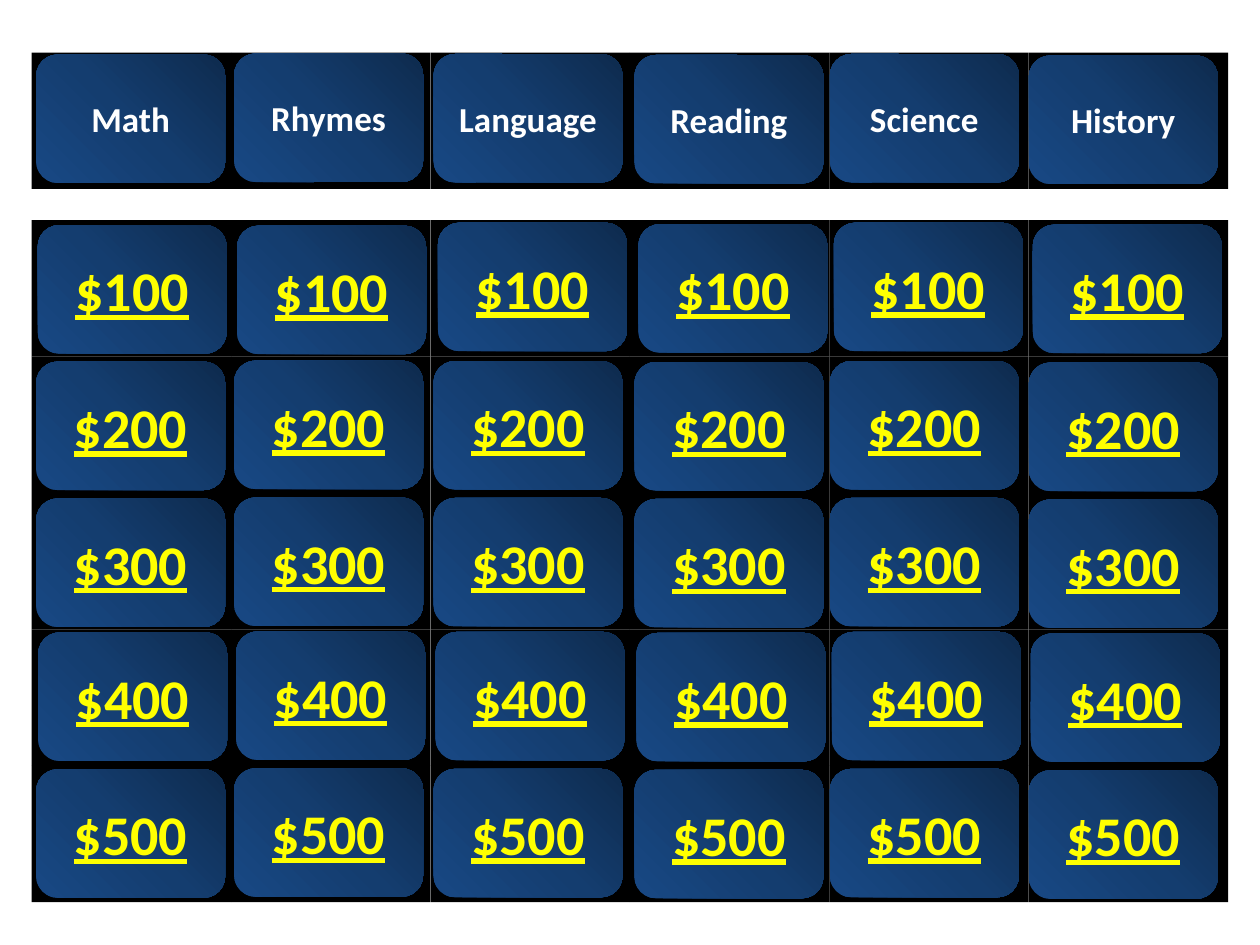
from lxml import etree
from pptx import Presentation
from pptx import util as u
from pptx.dml.color import RGBColor
from pptx.enum import shapes, text
from pptx.oxml import ns

Cm = u.Cm
BLACK = RGBColor(0x00, 0x00, 0x00)
WHITE = RGBColor(0xFF, 0xFF, 0xFF)
GOLD = RGBColor(0xFF, 0xFF, 0x00)
SHADES = [
    (0, RGBColor(0x0E, 0x2B, 0x4E)),
    (50, RGBColor(0x14, 0x3D, 0x6F)),
    (100, RGBColor(0x18, 0x48, 0x84)),
]

TOPICS = ["Math", "Rhymes", "Language", "Reading", "Science", "History"]
PRICES = ["$100", "$200", "$300", "$400", "$500"]

LEFTS = [0.73, 4.72, 8.74, 12.79, 16.73, 20.74]
DIPS = [0.02, 0, 0.01, 0.03, 0.01, 0.04]
FLAT = [0] * 6
ROWS = [
    (1.08, FLAT, DIPS),
    (4.49, [0.03, 0.06, 0.09, 0.08, 0.08, 0.08], [0.05, 0.06, 0, 0.03, 0, 0.04]),
    (7.27, FLAT, DIPS),
    (10.03, FLAT, DIPS),
    (12.73, [0.04] * 6, DIPS),
    (15.49, FLAT, DIPS),
]
EDGE, HEAD, BODY = 0.64, 1.06, 4.44
CELL_W, CELL_H = 4.02, 2.75
CARD_W, CARD_H = 3.81, 2.59


def add_box(slide, kind, x, y, w, h):
    box = slide.shapes.add_shape(kind, Cm(x), Cm(y), Cm(w), Cm(h))
    box.shadow.inherit = False
    box.line.fill.background()
    return box


def shade(box):
    grad = etree.Element(ns.qn("a:gradFill"), rotWithShape="1")
    stops = etree.SubElement(grad, ns.qn("a:gsLst"))
    for spot, tone in SHADES:
        stop = etree.SubElement(stops, ns.qn("a:gs"), pos=str(spot * 1000))
        etree.SubElement(stop, ns.qn("a:srgbClr"), val=str(tone))
    glow = etree.SubElement(grad, ns.qn("a:path"), path="circle")
    etree.SubElement(glow, ns.qn("a:fillToRect"), l="100000", b="100000")
    box.fill.background()
    blank = box.element.spPr.find(ns.qn("a:noFill"))
    box.element.spPr.replace(blank, grad)


def add_card(slide, x, y, label, size, tone, line):
    card = add_box(slide, shapes.MSO_SHAPE.ROUNDED_RECTANGLE, x, y, CARD_W, CARD_H)
    shade(card)
    frame = card.text_frame
    frame.text = label
    frame.vertical_anchor = text.MSO_ANCHOR.MIDDLE
    para = frame.paragraphs[0]
    para.alignment = text.PP_ALIGN.CENTER
    font = para.runs[0].font
    font.name, font.size, font.bold = "Calibri", u.Pt(size), True
    font.underline = line
    font.color.rgb = tone


def main():
    deck = Presentation()
    deck.slide_width, deck.slide_height = Cm(25.4), Cm(19.05)
    slide = deck.slides.add_slide(deck.slide_layouts[6])

    tops = [HEAD] + [BODY + i * CELL_H for i in range(len(PRICES))]
    for top in tops:
        for col in range(len(TOPICS)):
            cell = add_box(slide, shapes.MSO_SHAPE.RECTANGLE,
                           EDGE + col * CELL_W, top, CELL_W, CELL_H)
            cell.fill.solid()
            cell.fill.fore_color.rgb = BLACK

    board = [TOPICS] + [[price] * len(TOPICS) for price in PRICES]
    for row, (labels, (top, moves, dips)) in enumerate(zip(board, ROWS)):
        style = (32, GOLD, True) if row else (20, WHITE, False)
        for label, left, move, dip in zip(labels, LEFTS, moves, dips):
            add_card(slide, left + move, top + dip, label, *style)

    deck.save("out.pptx")


if __name__ == "__main__":
    main()
